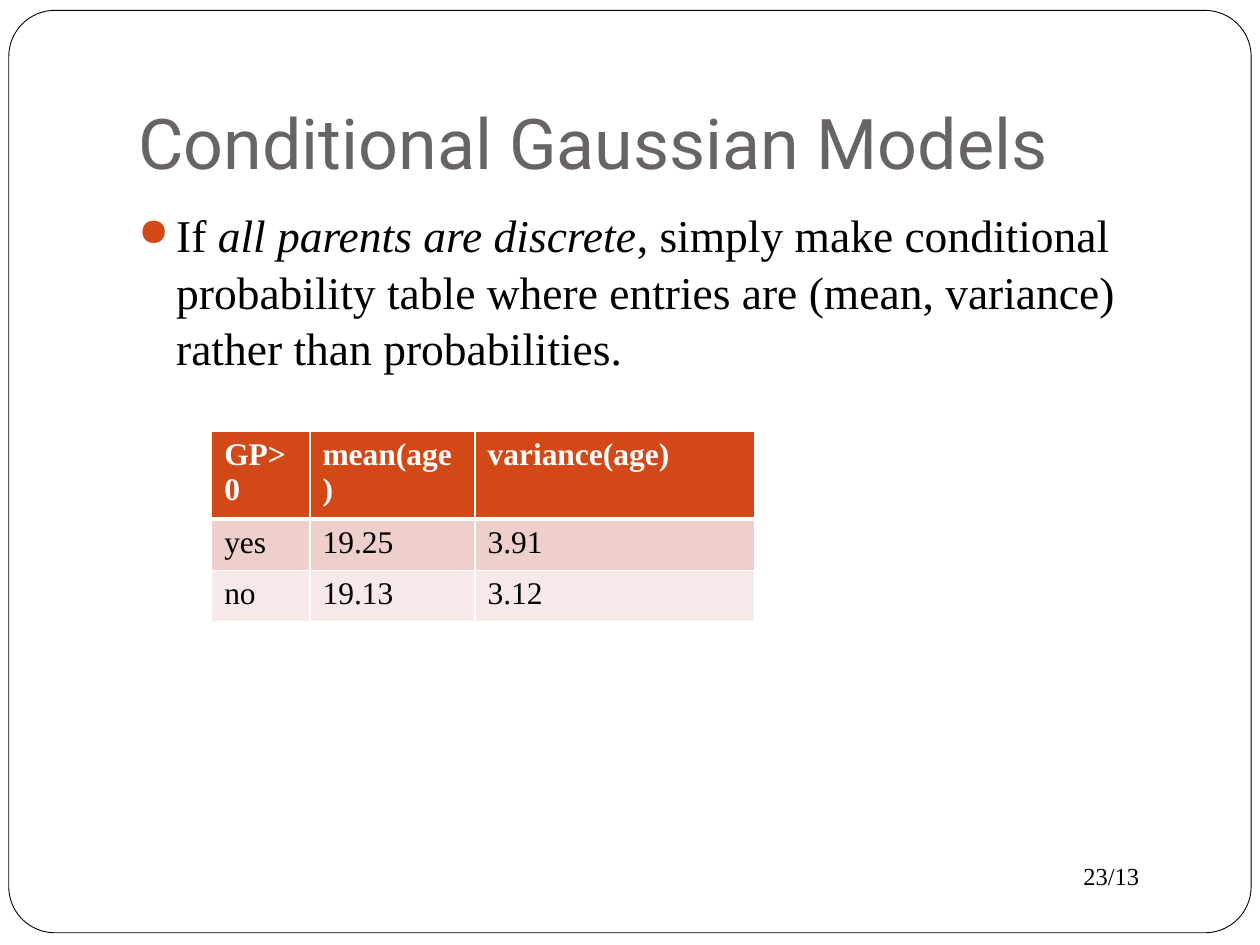
from dataclasses import dataclass

from lxml import etree
from pptx import Presentation, util as u
from pptx.dml.color import RGBColor
from pptx.enum import shapes, text
from pptx.oxml.ns import qn


@dataclass(frozen=True)
class Theme:
    ink: str = "000000"
    paper: str = "FFFFFF"
    heading: str = "696464"
    accent: str = "D34817"
    bands: tuple = ("EFCFCC", "F7E9E8")
    title_font: str = "Roboto"
    body_font: str = "Times New Roman"
    title_size: int = 40
    body_size: int = 26
    table_size: int = 18
    number_size: int = 14


def color(value):
    return RGBColor.from_string(value)


def add_element(parent, tag, **attributes):
    return etree.SubElement(parent, qn(tag), **attributes)


class SlideBuilder:
    def __init__(self, deck, theme):
        self.theme = theme
        self.width, self.height = deck.slide_width, deck.slide_height
        self.slide = deck.slides.add_slide(deck.slide_layouts[6])

    def area(self, left, top, width, height):
        return (round(left * self.width), round(top * self.height),
                round(width * self.width), round(height * self.height))

    def style(self, para, size, ink, font=None, bold=False):
        for span in para.runs:
            span.font.name = font or self.theme.body_font
            span.font.size = u.Pt(size)
            span.font.bold = bold
            span.font.color.rgb = color(ink)

    def frame(self, area, rounding):
        box = self.slide.shapes.add_shape(
            shapes.MSO_SHAPE.ROUNDED_RECTANGLE, *self.area(*area))
        box.adjustments[0] = rounding
        box.shadow.inherit = False
        box.fill.solid()
        box.fill.fore_color.rgb = color(self.theme.paper)
        box.line.color.rgb = color(self.theme.ink)
        box.line.width = u.Pt(0.5)

    def textbox(self, area, wording, size, ink, font=None, bottom=False):
        box = self.slide.shapes.add_textbox(*self.area(*area))
        frame = box.text_frame
        frame.word_wrap = True
        if bottom:
            frame.vertical_anchor = text.MSO_ANCHOR.BOTTOM
            frame.margin_bottom = u.Inches(0.1)
        para = frame.paragraphs[0]
        for index, part in enumerate(wording):
            span = para.add_run()
            span.text = part
            span.font.italic = index % 2 == 1
        self.style(para, size, ink, font)
        return para

    def bullet(self, area, wording):
        para = self.textbox(area, wording, self.theme.body_size, self.theme.ink)
        para.space_before = u.Pt(5.8)
        para.line_spacing = 1.04
        properties = para._p.get_or_add_pPr()
        indent = u.Inches(0.3)
        properties.set("marL", str(indent))
        properties.set("indent", str(-indent))
        tint = add_element(properties, "a:buClr")
        add_element(tint, "a:srgbClr", val=self.theme.accent)
        add_element(properties, "a:buSzPct", val="85000")
        add_element(properties, "a:buChar", char="●")

    def table(self, area, rows, shares):
        grid = self.slide.shapes.add_table(
            len(rows), len(shares), *self.area(*area)).table
        for column, share in zip(grid.columns, shares):
            column.width = round(share * self.width)
        for row, values in enumerate(rows):
            header = row == 0
            fill = self.theme.accent if header else self.theme.bands[row - 1]
            ink = self.theme.paper if header else self.theme.ink
            for column, value in enumerate(values):
                cell = grid.cell(row, column)
                cell.text_frame.text = value
                self.style(cell.text_frame.paragraphs[0],
                           self.theme.table_size, ink, bold=header)
                self.borders(cell, top=3 if row == 1 else 1,
                             bottom=3 if header else 1)
                cell.fill.solid()
                cell.fill.fore_color.rgb = color(fill)

    def borders(self, cell, top, bottom):
        properties = cell._tc.get_or_add_tcPr()
        for side, points in (("L", 1), ("R", 1), ("T", top), ("B", bottom)):
            line = add_element(properties, f"a:ln{side}", w=str(u.Pt(points)))
            fill = add_element(line, "a:solidFill")
            add_element(fill, "a:srgbClr", val=self.theme.paper)


def main():
    deck = Presentation()
    deck.slide_width, deck.slide_height = u.Inches(10), u.Inches(7.5)
    theme = Theme()
    page = SlideBuilder(deck, theme)

    page.frame((0.007, 0.011, 0.986, 0.976), 0.05)
    page.textbox((0.85, 0.905, 0.1, 0.045), ["23/13"],
                 theme.number_size, theme.ink)
    page.textbox((0.1, 0.04, 0.85, 0.167), ["Conditional Gaussian Models"],
                 theme.title_size, theme.heading, theme.title_font, bottom=True)
    page.bullet((0.1, 0.21, 0.85, 0.667), [
        "If ", "all parents are discrete",
        ", simply make conditional probability table where entries are "
        "(mean, variance) rather than probabilities."])
    page.table((0.168, 0.456, 0.432, 0.163), [
        ("GP>0", "mean(age)", "variance(age)"),
        ("yes", "19.25", "3.91"),
        ("no", "19.13", "3.12"),
    ], (0.078, 0.131, 0.222))

    deck.save("out.pptx")


if __name__ == "__main__":
    main()
